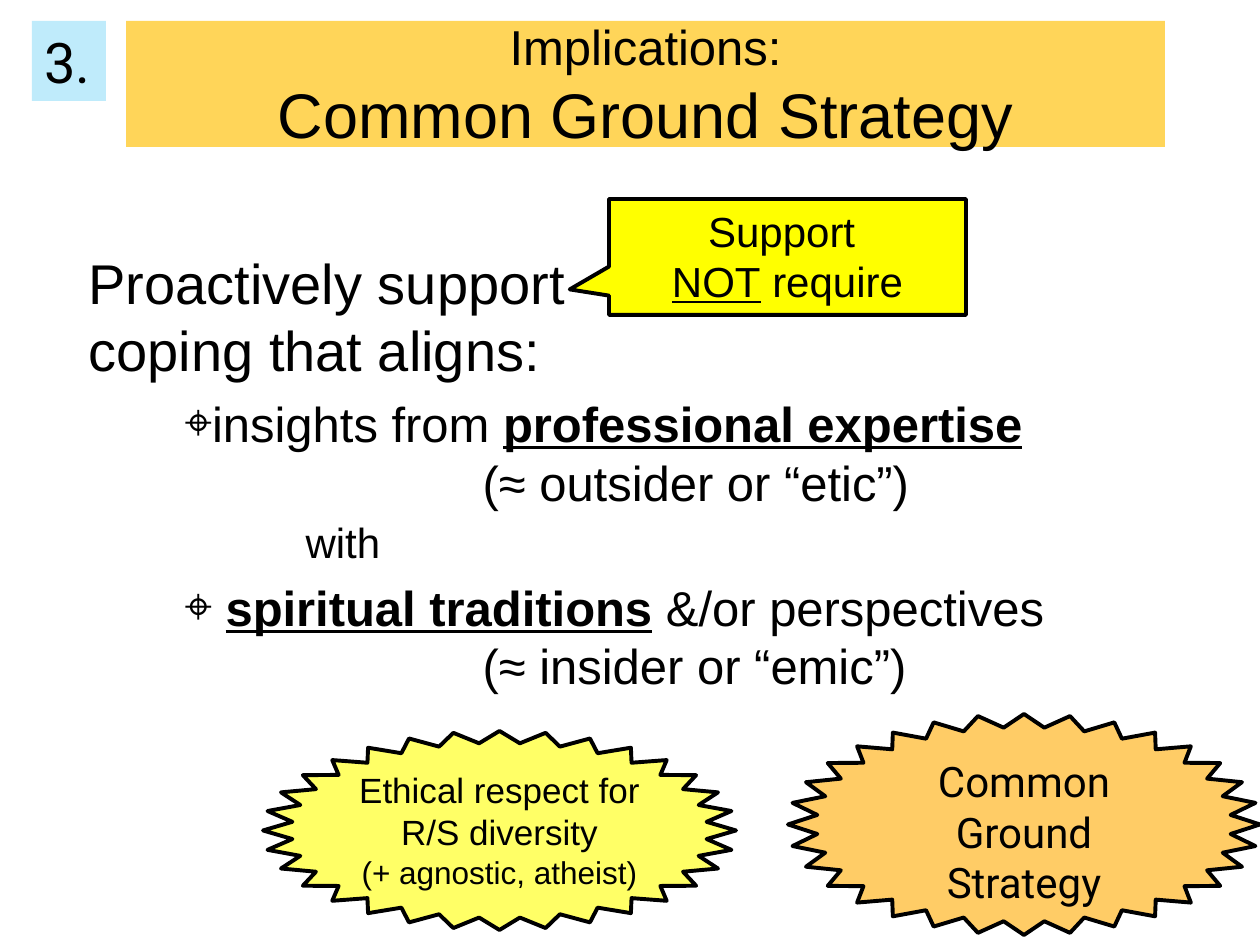
"""Build the Common Ground Strategy slide."""
from lxml import etree
from pptx import Presentation
from pptx import util as u
from pptx.dml.color import RGBColor
from pptx.enum import shapes, text
from pptx.oxml.ns import qn

SCALE = 914400 // 126
BLACK = "000000"
TITLE = [[("Implications:", 28, "")], [("Common Ground Strategy", 36, "")]]
BODY = [
    dict(left=55, lines=[[("Proactively support ", 32, "")], [("coping that aligns:", 32, "")]]),
    dict(left=177, hanging=26, bullet="⌖", before=6,
         lines=[[("insights from ", 28, ""), ("professional expertise", 28, "bu")]]),
    dict(left=449, lines=[[("(≈ outsider or “etic”)", 28, "")]]),
    dict(left=272, before=3, lines=[[("with", 24, "")]]),
    dict(left=192, hanging=41, bullet="⌖", before=6,
         lines=[[("spiritual traditions", 28, "bu"), (" &/or perspectives", 28, "")]]),
    dict(left=449, lines=[[("(≈ insider or “emic”)", 28, "")]]),
]
KIND = shapes.MSO_SHAPE
STAR_INSETS = (4, 0, 4, 13)
SHAPES = [
    dict(kind=KIND.RECTANGLE, box=(32, 21, 74, 80), fill="00B0F0", alpha=25, font="Roboto",
         align="LEFT", anchor="TOP", wrap=False, lines=[[("3.", 32, "")]]),
    dict(kind=KIND.RECTANGULAR_CALLOUT, box=(609, 199, 357, 116), fill="FFFF00", line=BLACK,
         adjust=(-0.61, 0.28),
         lines=[[("Support ", 24, "")], [("NOT", 24, "u"), (" require", 24, "")]]),
    dict(kind=KIND.STAR_32_POINT, box=(263, 731, 473, 199), fill="FFFF00", alpha=60, line=BLACK,
         adjust=(0.44,), insets=STAR_INSETS,
         lines=[[("Ethical respect for R/S diversity", 20, "")],
                [("(+ agnostic, atheist)", 18, "")]]),
    dict(kind=KIND.STAR_32_POINT, box=(788, 714, 472, 221), fill="FFCC66", line=BLACK,
         adjust=(0.44,), insets=STAR_INSETS, font="Roboto",
         lines=[[("Common Ground Strategy", 24, "")]]),
]


def px(value):
    """Turn pixels into EMU."""
    return u.Emu(value * SCALE)


def color(value):
    """Turn a hex string into a colour."""
    return RGBColor.from_string(value)


def place(shape, box):
    """Move and size a shape."""
    shape.left, shape.top, shape.width, shape.height = map(px, box)


def fill_shape(shape, value, alpha=100):
    """Fill a shape, with its opacity in percent."""
    shape.fill.solid()
    shape.fill.fore_color.rgb = color(value)
    if alpha < 100:
        node = shape.fill._xPr.find(".//" + qn("a:srgbClr"))
        etree.SubElement(node, qn("a:alpha"), val=str(alpha * 1000))


def write_lines(paragraph, lines, font="Arial"):
    """Add lines of styled runs, parted by line breaks."""
    for index, line in enumerate(lines):
        if index:
            paragraph.add_line_break()
        for wording, size, style in line:
            run = paragraph.add_run()
            run.text = wording
            run.font.name, run.font.size = font, u.Pt(size)
            run.font.bold, run.font.underline = "b" in style, "u" in style
            run.font.color.rgb = color(BLACK)


def add_title(slide):
    """Fill the title placeholder."""
    title = slide.shapes.title
    place(title, (126, 21, 1039, 126))
    fill_shape(title, "FFC000", 65)
    frame = title.text_frame
    frame.vertical_anchor = text.MSO_ANCHOR.MIDDLE
    frame.auto_size = text.MSO_AUTO_SIZE.NONE
    frame.paragraphs[0].alignment = text.PP_ALIGN.CENTER
    write_lines(frame.paragraphs[0], TITLE)


def add_body(slide):
    """Fill the body placeholder."""
    body = slide.placeholders[1]
    place(body, (21, 242, 1176, 693))
    frame = body.text_frame
    frame.auto_size = text.MSO_AUTO_SIZE.NONE
    for index, item in enumerate(BODY):
        paragraph = frame.add_paragraph() if index else frame.paragraphs[0]
        paragraph.space_before = u.Pt(item.get("before", 0))
        properties = paragraph._p.get_or_add_pPr()
        properties.set("marL", str(px(item["left"])))
        properties.set("indent", str(px(-item.get("hanging", 0))))
        if "bullet" in item:
            etree.SubElement(properties, qn("a:buChar"), char=item["bullet"])
        else:
            etree.SubElement(properties, qn("a:buNone"))
        write_lines(paragraph, item["lines"])


def add_shape(slide, item):
    """Add one filled shape with its text."""
    shape = slide.shapes.add_shape(item["kind"], *map(px, item["box"]))
    shape.shadow.inherit = False
    for index, value in enumerate(item.get("adjust", ())):
        shape.adjustments[index] = value
    fill_shape(shape, item["fill"], item.get("alpha", 100))
    if "line" in item:
        shape.line.color.rgb = color(item["line"])
        shape.line.width = u.Pt(2.25)
    else:
        shape.line.fill.background()
    frame = shape.text_frame
    frame.word_wrap = item.get("wrap", True)
    frame.vertical_anchor = text.MSO_ANCHOR[item.get("anchor", "TOP")]
    if "insets" in item:
        (frame.margin_left, frame.margin_top,
         frame.margin_right, frame.margin_bottom) = map(px, item["insets"])
    paragraph = frame.paragraphs[0]
    paragraph.alignment = text.PP_ALIGN[item.get("align", "CENTER")]
    write_lines(paragraph, item["lines"], item.get("font", "Arial"))


def main():
    """Build and save the slide."""
    presentation = Presentation()
    presentation.slide_width, presentation.slide_height = px(1260), px(945)
    slide = presentation.slides.add_slide(presentation.slide_layouts[1])
    add_title(slide)
    add_body(slide)
    for item in SHAPES:
        add_shape(slide, item)
    presentation.save("out.pptx")


if __name__ == "__main__":
    main()
